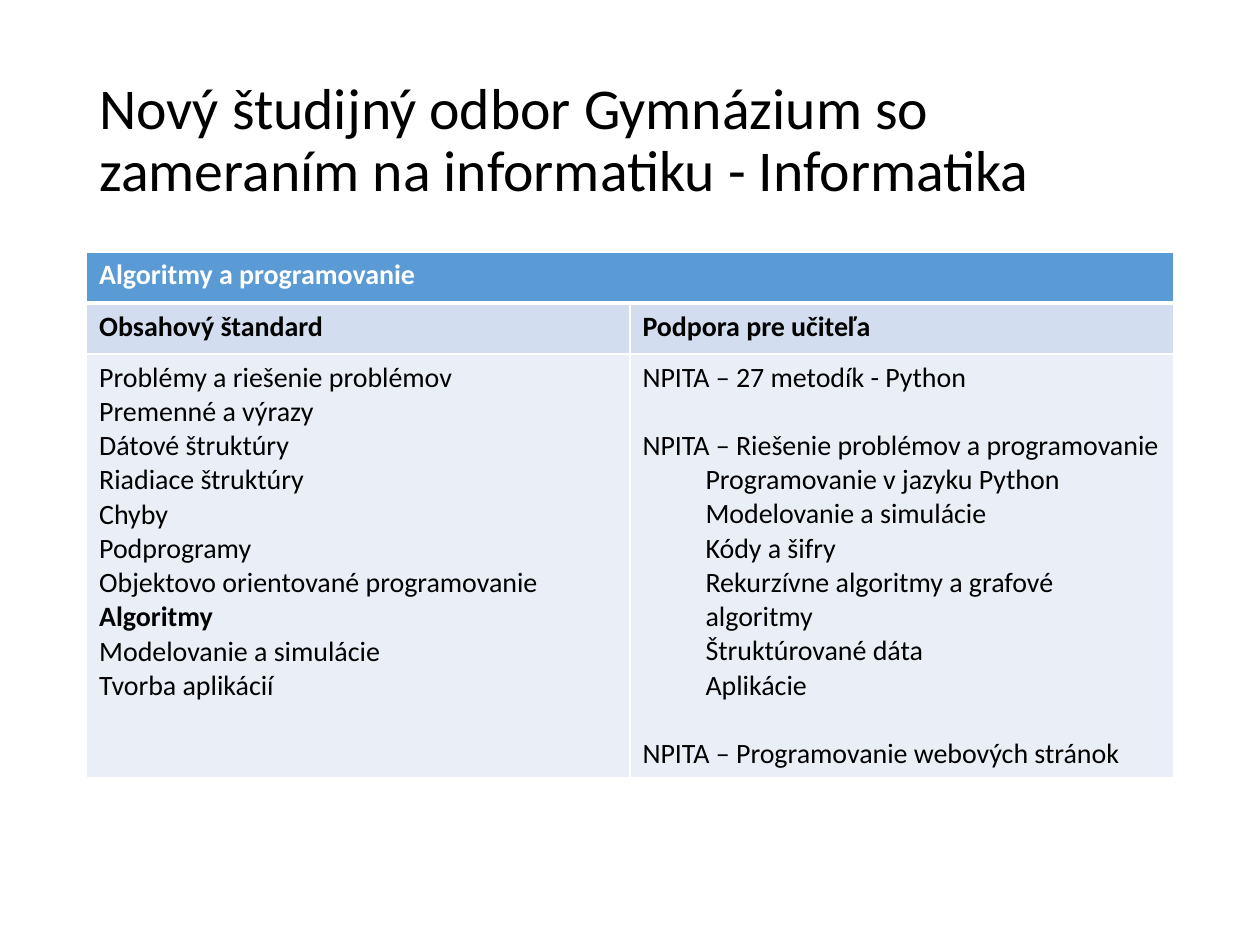
"""Builds the slide on the informatics curriculum with its table of standards."""
from dataclasses import dataclass

from lxml import etree
from pptx import Presentation
from pptx.dml.color import RGBColor
from pptx.enum.text import MSO_ANCHOR, MSO_AUTO_SIZE, PP_ALIGN
from pptx.oxml.ns import qn
from pptx.util import Pt

LEFT, MIDDLE, NO_FIT = PP_ALIGN.LEFT, MSO_ANCHOR.MIDDLE, MSO_AUTO_SIZE.NONE
BLACK = RGBColor(0x00, 0x00, 0x00)
WHITE = RGBColor(0xFF, 0xFF, 0xFF)
BLUE = RGBColor(0x5B, 0x9B, 0xD5)
LIGHT_BLUE = RGBColor(0xD2, 0xDE, 0xEF)
PALE_BLUE = RGBColor(0xEA, 0xEF, 0xF7)
FONT = "Calibri"
MARGIN, CONTENT_WIDTH = 49.5, 621
ROW_HEIGHTS = (29.2, 29.2, 222)
BLANK_LINE = 19.5


@dataclass
class Line:
    text: str
    bold: bool = False
    level: int = 0
    before: float = 0


HEADER = [Line("Algoritmy a programovanie", bold=True)]
HEADINGS = [[Line("Obsahový štandard", bold=True)],
            [Line("Podpora pre učiteľa", bold=True)]]
TOPICS = [
    Line("Problémy a riešenie problémov"),
    Line("Premenné a výrazy"),
    Line("Dátové štruktúry"),
    Line("Riadiace štruktúry"),
    Line("Chyby"),
    Line("Podprogramy"),
    Line("Objektovo orientované programovanie"),
    Line("Algoritmy", bold=True),
    Line("Modelovanie a simulácie"),
    Line("Tvorba aplikácií"),
]
SUPPORT = [
    Line("NPITA – 27 metodík - Python"),
    Line("NPITA – Riešenie problémov a programovanie", before=BLANK_LINE),
    Line("Programovanie v jazyku Python", level=1),
    Line("Modelovanie a simulácie", level=1),
    Line("Kódy a šifry", level=1),
    Line("Rekurzívne algoritmy a grafové algoritmy", level=1),
    Line("Štruktúrované dáta", level=1),
    Line("Aplikácie", level=1),
    Line("NPITA – Programovanie webových stránok", before=BLANK_LINE),
]


def write(p, text: str, *, size: float = 16, color: RGBColor = BLACK,
          bold: bool = False, level: int = 0, before: float = 0,
          spacing: float = 1.0) -> None:
    p.alignment = LEFT
    p.level = level
    p.space_before = Pt(before)
    p.line_spacing = spacing
    if level:
        pPr = p._p.get_or_add_pPr()
        pPr.set("marL", str(Pt(36 * level)))
        pPr.set("indent", "0")
    r = p.add_run()
    r.text = text
    r.font.name, r.font.size, r.font.bold = FONT, Pt(size), bold
    r.font.color.rgb = color


def set_borders(cell, bottom: float) -> None:
    tcPr = cell._tc.get_or_add_tcPr()
    widths = {"a:lnL": 1, "a:lnR": 1, "a:lnT": 1, "a:lnB": bottom}
    for i, (tag, width) in enumerate(widths.items()):
        ln = etree.Element(qn(tag), w=str(Pt(width)))
        fill = etree.SubElement(ln, qn("a:solidFill"))
        etree.SubElement(fill, qn("a:srgbClr"), val=str(WHITE))
        tcPr.insert(i, ln)


def fill_cell(cell, lines: list[Line], *, fill: RGBColor,
              color: RGBColor = BLACK, bottom: float = 1) -> None:
    cell.fill.solid()
    cell.fill.fore_color.rgb = fill
    set_borders(cell, bottom)
    tf = cell.text_frame
    for i, line in enumerate(lines):
        p = tf.add_paragraph() if i else tf.paragraphs[0]
        write(p, line.text, color=color, bold=line.bold,
              level=line.level, before=line.before)


def add_title(slide, text: str) -> None:
    sp = slide.shapes.title
    sp.left, sp.top = Pt(MARGIN), Pt(28.75)
    sp.width, sp.height = Pt(CONTENT_WIDTH), Pt(104.4)
    tf = sp.text_frame
    tf.word_wrap, tf.auto_size, tf.vertical_anchor = True, NO_FIT, MIDDLE
    write(tf.paragraphs[0], text, size=33, spacing=0.9)


def add_standards_table(slide) -> None:
    table = slide.shapes.add_table(
        3, 2, Pt(MARGIN), Pt(144), Pt(CONTENT_WIDTH), Pt(sum(ROW_HEIGHTS))).table
    for row, height in zip(table.rows, ROW_HEIGHTS):
        row.height = Pt(height)
    table.cell(0, 0).merge(table.cell(0, 1))
    for col, lines in enumerate((HEADER, [])):
        fill_cell(table.cell(0, col), lines, fill=BLUE, color=WHITE, bottom=3)
    for col, lines in enumerate(HEADINGS):
        fill_cell(table.cell(1, col), lines, fill=LIGHT_BLUE)
    for col, lines in enumerate((TOPICS, SUPPORT)):
        fill_cell(table.cell(2, col), lines, fill=PALE_BLUE)


def main() -> None:
    prs = Presentation()
    prs.slide_width, prs.slide_height = Pt(720), Pt(540)
    slide = prs.slides.add_slide(prs.slide_layouts[5])
    add_title(slide, "Nový študijný odbor Gymnázium so zameraním na "
                     "informatiku - Informatika")
    add_standards_table(slide)
    prs.save("out.pptx")


if __name__ == "__main__":
    main()
